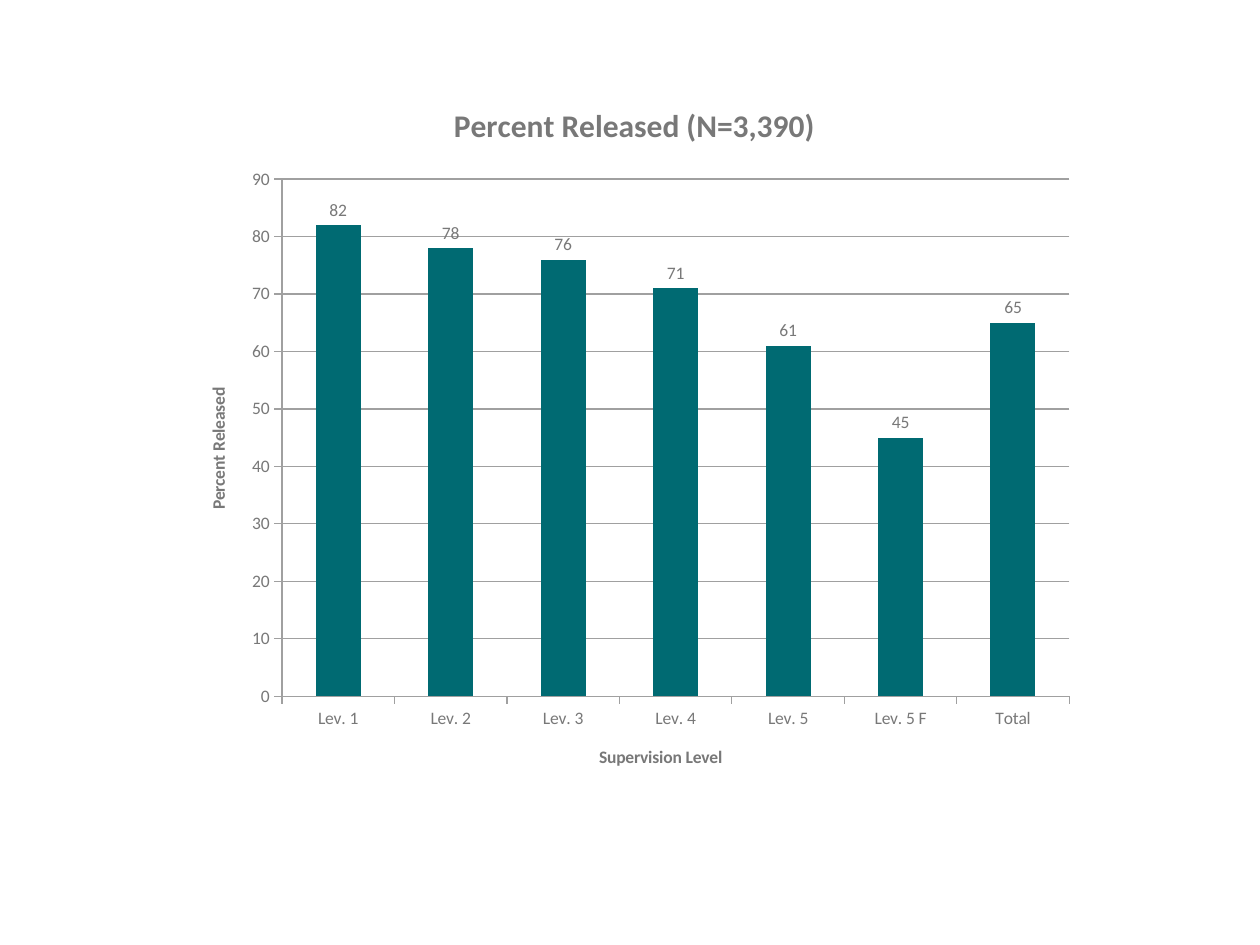
from pptx import Presentation
from pptx.chart.data import CategoryChartData as Data
from pptx.dml.color import RGBColor as RGB
from pptx.enum.chart import XL_CHART_TYPE as Kind, XL_LABEL_POSITION as Spot
from pptx.enum.chart import XL_TICK_MARK as Tick
from pptx.util import Inches, Pt

# Content
TITLE = "Percent Released (N=3,390)"
AXES = {"category_axis": "Supervision Level", "value_axis": "Percent Released"}
RATES = [
    ("Lev. 1", 82), ("Lev. 2", 78), ("Lev. 3", 76), ("Lev. 4", 71),
    ("Lev. 5", 61), ("Lev. 5 F", 45), ("Total", 65),
]
HEX = {"text": "787878", "bar": "006A72", "line": "A0A0A0"}
BOX = (1.44, 0.61, 7.19, 5.69)
SCALE = {"minimum_scale": 0, "maximum_scale": 90, "major_unit": 10,
         "has_major_gridlines": True}


def color(name):
    return RGB.from_string(HEX[name])


def style(font, size, bold=False):
    form = {"name": "Calibri", "size": Pt(size), "bold": bold}
    for key, val in form.items():
        setattr(font, key, val)
    font.color.rgb = color("text")


def label(owner, text, size):
    owner.has_title = True
    frame = owner.chart_title if hasattr(owner, "chart_title") else owner.axis_title
    frame.text_frame.text = text
    style(frame.text_frame.paragraphs[0].runs[0].font, size, True)


def rule(line):
    line.color.rgb = color("line")
    line.width = Pt(0.75)


prs = Presentation()
prs.slide_width, prs.slide_height = Inches(10), Inches(7.5)
slide = prs.slides.add_slide(prs.slide_layouts[6])

# Chart and its heading
data = Data()
data.categories = [name for name, rate in RATES]
data.add_series("Series 1", [rate for name, rate in RATES])
chart = slide.shapes.add_chart(
    Kind.COLUMN_CLUSTERED, *map(Inches, BOX), data).chart
style(chart.font, 10)
chart.has_legend = False
label(chart, TITLE, 18)

# Axes
for name, text in AXES.items():
    axis = getattr(chart, name)
    label(axis, text, 10)
    axis.major_tick_mark = Tick.OUTSIDE
    axis.minor_tick_mark = Tick.NONE
    rule(axis.format.line)
for key, val in SCALE.items():
    setattr(chart.value_axis, key, val)
rule(chart.value_axis.major_gridlines.format.line)

# Bars and their values
plot = chart.plots[0]
plot.gap_width = 150
plot.vary_by_categories = False
bars = plot.series[0]
bars.format.fill.solid()
bars.format.fill.fore_color.rgb = color("bar")
tags = bars.data_labels
tags.show_value = True
tags.position = Spot.OUTSIDE_END
style(tags.font, 10)

prs.save("out.pptx")
